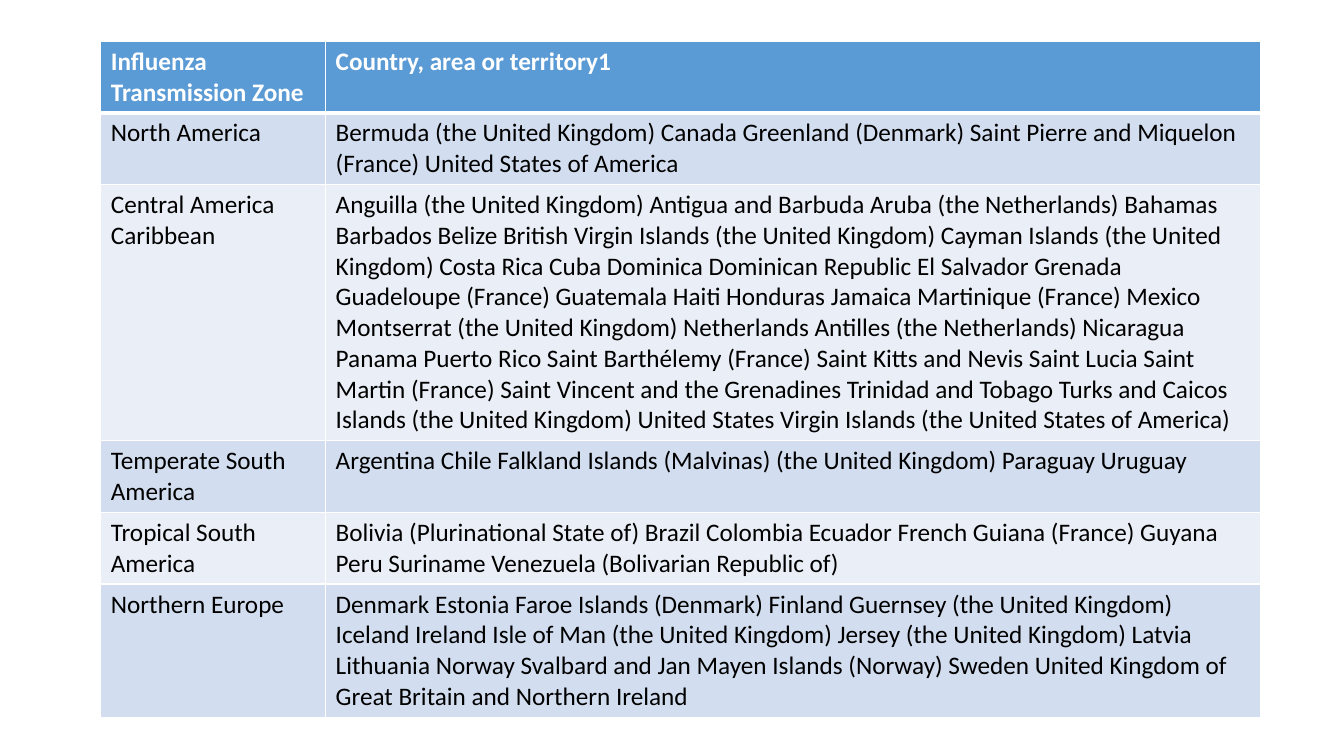
"""Build a slide with a table of influenza transmission zones and their countries."""
from lxml.etree import SubElement
from pptx import Presentation
from pptx.dml.color import RGBColor
from pptx.oxml.ns import qn
from pptx.util import Inches, Pt

ROWS = [
    ("Influenza Transmission Zone", "Country, area or territory1"),
    ("North America",
     "Bermuda (the United Kingdom) Canada Greenland (Denmark) Saint Pierre and Miquelon "
     "(France) United States of America"),
    ("Central America Caribbean",
     "Anguilla (the United Kingdom) Antigua and Barbuda Aruba (the Netherlands) Bahamas "
     "Barbados Belize British Virgin Islands (the United Kingdom) Cayman Islands (the United "
     "Kingdom) Costa Rica Cuba Dominica Dominican Republic El Salvador Grenada "
     "Guadeloupe (France) Guatemala Haiti Honduras Jamaica Martinique (France) Mexico "
     "Montserrat (the United Kingdom) Netherlands Antilles (the Netherlands) Nicaragua "
     "Panama Puerto Rico Saint Barthélemy (France) Saint Kitts and Nevis Saint Lucia Saint "
     "Martin (France) Saint Vincent and the Grenadines Trinidad and Tobago Turks and Caicos "
     "Islands (the United Kingdom) United States Virgin Islands (the United States of America)"),
    ("Temperate South America",
     "Argentina Chile Falkland Islands (Malvinas) (the United Kingdom) Paraguay Uruguay"),
    ("Tropical South America",
     "Bolivia (Plurinational State of) Brazil Colombia Ecuador French Guiana (France) Guyana "
     "Peru Suriname Venezuela (Bolivarian Republic of)"),
    ("Northern Europe",
     "Denmark Estonia Faroe Islands (Denmark) Finland Guernsey (the United Kingdom) "
     "Iceland Ireland Isle of Man (the United Kingdom) Jersey (the United Kingdom) Latvia "
     "Lithuania Norway Svalbard and Jan Mayen Islands (Norway) Sweden United Kingdom of "
     "Great Britain and Northern Ireland"),
]
LINES = [2, 2, 8, 2, 2, 4]
COL_WIDTHS = [2.23, 9.27]
LEFT, TOP = 1, 0.41
LINE_HEIGHT, CELL_PADDING = 0.3, 0.1

WHITE = RGBColor(0xFF, 0xFF, 0xFF)
BLACK = RGBColor(0, 0, 0)
HEADER_BLUE = RGBColor(0x5B, 0x9B, 0xD5)
BANDS = [RGBColor(0xEA, 0xEF, 0xF7), RGBColor(0xD2, 0xDE, 0xEF)]
HEADER_FONT = {"name": "Calibri", "size": Pt(18), "bold": True}
BODY_FONT = {**HEADER_FONT, "bold": False}


def add_borders(cell, widths):
    """Draw solid white borders, given a width in points for each side."""
    tc_pr = cell._tc.get_or_add_tcPr()
    for side, width in widths.items():
        ln = SubElement(tc_pr, qn(f"a:ln{side}"), w=str(Pt(width)))
        SubElement(SubElement(ln, qn("a:solidFill")), qn("a:srgbClr"), val=str(WHITE))


def fill_cell(cell, text, row):
    """Write and style one cell according to its row."""
    header = row == 0
    add_borders(cell, {"L": 1, "R": 1, "T": 3 if row == 1 else 1, "B": 3 if header else 1})
    cell.fill.solid()
    cell.fill.fore_color.rgb = HEADER_BLUE if header else BANDS[row % 2]
    r = cell.text_frame.paragraphs[0].add_run()
    r.text = text
    for name, value in (HEADER_FONT if header else BODY_FONT).items():
        setattr(r.font, name, value)
    r.font.color.rgb = WHITE if header else BLACK


def main():
    """Create the presentation and save it."""
    prs = Presentation()
    prs.slide_width, prs.slide_height = Inches(13.33), Inches(7.5)
    s = prs.slides.add_slide(prs.slide_layouts[6])
    heights = [n * LINE_HEIGHT + CELL_PADDING for n in LINES]
    table = s.shapes.add_table(
        len(ROWS), len(COL_WIDTHS), Inches(LEFT), Inches(TOP),
        Inches(sum(COL_WIDTHS)), Inches(sum(heights))).table
    for column, width in zip(table.columns, COL_WIDTHS):
        column.width = Inches(width)
    for i, (texts, height) in enumerate(zip(ROWS, heights)):
        table.rows[i].height = Inches(height)
        for j, text in enumerate(texts):
            fill_cell(table.cell(i, j), text, i)
    prs.save("out.pptx")


if __name__ == "__main__":
    main()
